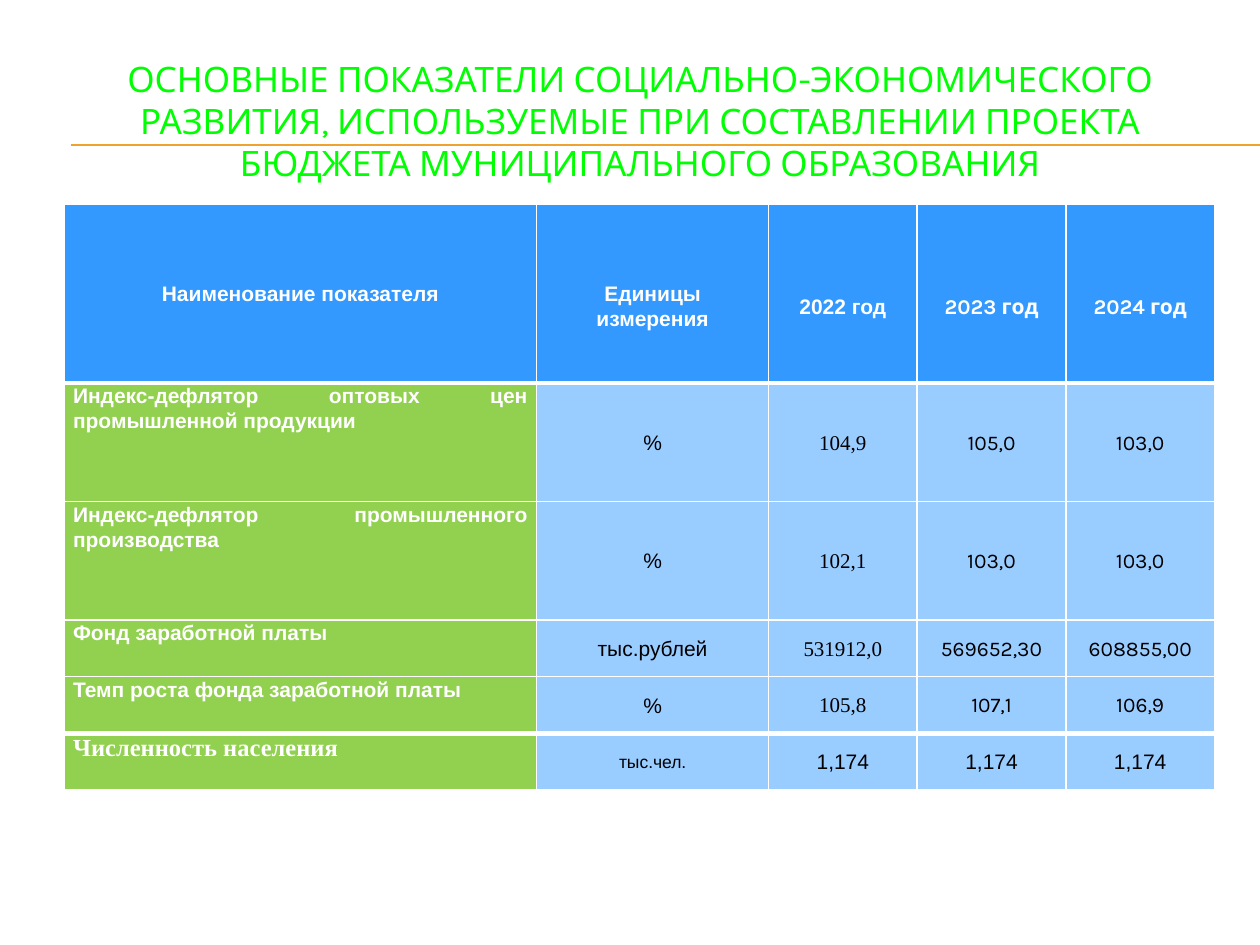
from lxml.etree import SubElement
from pptx import Presentation
from pptx.dml.color import RGBColor
from pptx.enum.shapes import MSO_CONNECTOR
from pptx.enum.text import MSO_ANCHOR, PP_ALIGN
from pptx.oxml import parse_xml
from pptx.oxml.ns import nsdecls, qn
from pptx.util import Inches, Pt

WHITE, BLACK, TITLE_GREEN, RULE_ORANGE = "FFFFFF", "000000", "00FF00", "F0A22E"
HEADER_BLUE, NAME_GREEN, VALUE_BLUE = "3399FF", "92D050", "99CCFF"
SANS, SERIF, KARLA = "Arial", "Times New Roman", "Karla"

TITLE = ("ОСНОВНЫЕ ПОКАЗАТЕЛИ СОЦИАЛЬНО-ЭКОНОМИЧЕСКОГО РАЗВИТИЯ, ИСПОЛЬЗУЕМЫЕ "
         "ПРИ СОСТАВЛЕНИИ ПРОЕКТА БЮДЖЕТА МУНИЦИПАЛЬНОГО ОБРАЗОВАНИЯ")
HEADERS = ["Наименование показателя", "Единицы измерения", "2022 год", "2023 год", "2024 год"]
INDICATORS = [
    ["Индекс-дефлятор оптовых цен промышленной продукции", "%", "104,9", "105,0", "103,0"],
    ["Индекс-дефлятор промышленного производства", "%", "102,1", "103,0", "103,0"],
    ["Фонд заработной платы", "тыс.рублей", "531912,0", "569652,30", "608855,00"],
    ["Темп роста фонда заработной платы", "%", "105,8", "107,1", "106,9"],
]
POPULATION = ["Численность населения", "тыс.чел.", "1,174", "1,174", "1,174"]
HEADER_FONTS = [SANS, SANS, SANS, KARLA, KARLA]
VALUE_FONTS = [SANS, SANS, SERIF, KARLA, KARLA]
POPULATION_FONTS = [SERIF, SANS, SANS, SANS, SANS]
POPULATION_SIZES = [14, 10, 12, 12, 12]


def color(hex_string):
    return RGBColor.from_string(hex_string)


def write(frame, text, font=SANS, size=12, ink=BLACK, bold=False,
          align=PP_ALIGN.CENTER, spacing=1.07):
    frame.word_wrap = True
    paragraph = frame.paragraphs[0]
    paragraph.alignment = align
    paragraph.line_spacing = spacing
    run = paragraph.add_run()
    run.text = text
    run.font.name, run.font.size, run.font.bold = font, Pt(size), bold
    run.font.color.rgb = color(ink)


class IndicatorSlide:
    """Places elements on a grid of 100 columns by 75 rows."""

    def __init__(self, deck):
        self.unit = deck.slide_width / 100
        self.slide = deck.slides.add_slide(deck.slide_layouts[6])
        self.shapes = self.slide.shapes

    def grid(self, *counts):
        return [round(count * self.unit) for count in counts]

    def rule(self, left, right, row):
        line = self.shapes.add_connector(
            MSO_CONNECTOR.STRAIGHT, *self.grid(left, row, right, row))
        line.line.color.rgb = color(RULE_ORANGE)
        line.line.width = Pt(0.75)
        SubElement(line._element.spPr, qn("a:effectLst"))

    def title(self, text, *box):
        frame = self.shapes.add_textbox(*self.grid(*box)).text_frame
        frame.vertical_anchor = MSO_ANCHOR.MIDDLE
        write(frame, text, font=KARLA, size=20, ink=TITLE_GREEN, spacing=1.0)

    def table(self, left, top, widths, heights):
        box = self.grid(left, top, sum(widths), sum(heights))
        table = self.shapes.add_table(len(heights), len(widths), *box).table
        for column, width in zip(table.columns, self.grid(*widths)):
            column.width = width
        for row, height in zip(table.rows, self.grid(*heights)):
            row.height = height
        return table

    def cell(self, cell, text, fill, anchor=MSO_ANCHOR.MIDDLE, drop=0,
             top_line=1, bottom_line=1, **text_format):
        cell.fill.solid()
        cell.fill.fore_color.rgb = color(fill)
        cell.vertical_anchor = anchor
        cell.margin_left = cell.margin_right = Inches(0.07)
        cell.margin_top, cell.margin_bottom = Inches(drop), 0
        borders = {"lnL": 1, "lnR": 1, "lnT": top_line, "lnB": bottom_line}
        for place, (side, points) in enumerate(borders.items()):
            cell._tc.get_or_add_tcPr().insert(place, parse_xml(
                f'<a:{side} {nsdecls("a")} w="{Pt(points)}"><a:solidFill>'
                f'<a:srgbClr val="{WHITE}"/></a:solidFill></a:{side}>'))
        write(cell.text_frame, text, **text_format)

    def indicator_row(self, cells, texts, fonts, sizes, **borders):
        for column, (cell, text, font, size) in enumerate(zip(cells, texts, fonts, sizes)):
            if column == 0:
                look = dict(fill=NAME_GREEN, anchor=MSO_ANCHOR.TOP, ink=WHITE,
                            bold=True, align=PP_ALIGN.JUSTIFY)
            else:
                look = dict(fill=VALUE_BLUE)
            self.cell(cell, text, font=font, size=size, **look, **borders)


def main():
    deck = Presentation()
    deck.slide_width, deck.slide_height = Inches(10), Inches(7.5)
    page = IndicatorSlide(deck)

    # Double rule in the gap between the second and third title lines
    for row in (11.5, 11.55):
        page.rule(5.6, 100, row)
    page.title(TITLE, 3.3, 5, 95, 9.2)

    # Table of indicators
    table = page.table(5.1, 16.2, [37.5, 18.4] + [11.8] * 3,
                       [14.2] + [9.4] * 2 + [4.5] * 3)
    header, *indicators, population = [row.cells for row in table.rows]

    # Header: every column but the first sits half a line lower
    for column, (cell, text, font) in enumerate(zip(header, HEADERS, HEADER_FONTS)):
        page.cell(cell, text, HEADER_BLUE, drop=0.2 if column else 0,
                  bottom_line=3, font=font, ink=WHITE, bold=True)

    # Body, then the population row under a thick line
    for number, (cells, texts) in enumerate(zip(indicators, INDICATORS), start=1):
        page.indicator_row(cells, texts, VALUE_FONTS, [12] * 5,
                           top_line=3 if number == 1 else 1,
                           bottom_line=3 if number == len(INDICATORS) else 1)
    page.indicator_row(population, POPULATION, POPULATION_FONTS, POPULATION_SIZES, top_line=3)

    deck.save("out.pptx")


if __name__ == "__main__":
    main()
